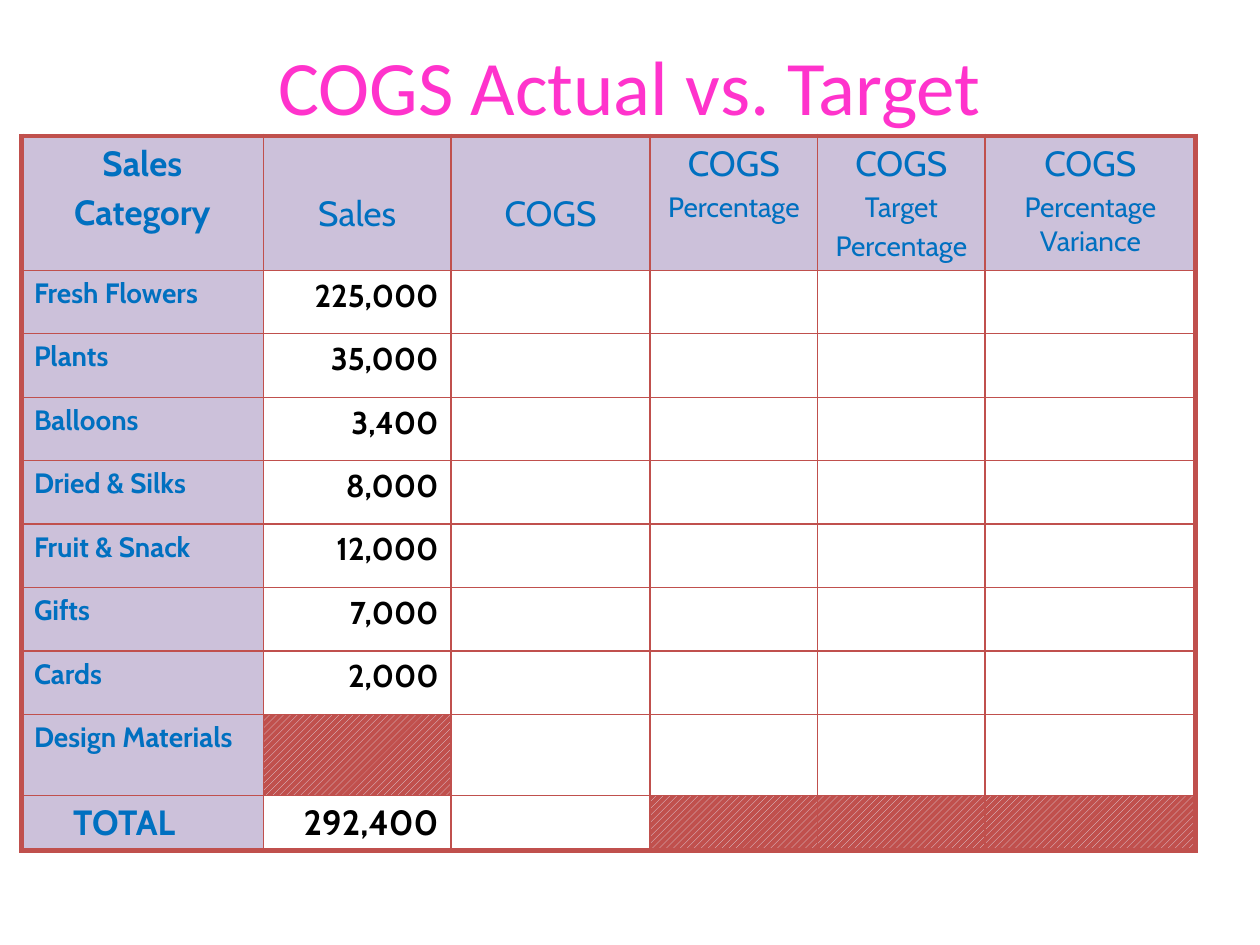
"""Build the cost of goods sold worksheet slide with its title and table."""
from lxml import etree
from pptx import Presentation
from pptx import util as u
from pptx.dml.color import RGBColor
from pptx.enum import dml, text
from pptx.oxml import ns

COLORS = {
    "title": "FF33CC",
    "label": "0070C0",
    "number": "000000",
    "heading fill": "CCC1DA",
    "line": "C0504D",
    "hatch": "E6E0EC",
}
ALIGN = text.PP_ALIGN

TITLE = "COGS Actual vs. Target"
HEADINGS = [
    [("Sales", 20), ("Category", 20)],
    [("Sales", 20)],
    [("COGS", 20)],
    [("COGS", 20), ("Percentage", 16)],
    [("COGS", 20), ("Target", 16), ("Percentage", 16)],
    [("COGS", 20), ("Percentage Variance", 16)],
]
SECOND_LINE_HEADINGS = (1, 2)
SALES = [
    ("Fresh Flowers", "225,000"),
    ("Plants", "35,000"),
    ("Balloons", "3,400"),
    ("Dried & Silks", "8,000"),
    ("Fruit & Snack", "12,000"),
    ("Gifts", "7,000"),
    ("Cards", "2,000"),
    ("Design Materials", ""),
    ("TOTAL", "292,400"),
]
COLUMN_WIDTHS = [1.92, 1.49, 1.58, 1.33, 1.33, 1.67]
ROW_HEIGHTS = [1.06] + [3.53 / 7] * 7 + [0.64, 0.43]
LAST_ROW, LAST_COLUMN = len(ROW_HEIGHTS) - 1, len(COLUMN_WIDTHS) - 1
HATCHED = {(LAST_ROW - 1, 1)} | {(LAST_ROW, column) for column in (3, 4, 5)}


def color(name):
    return RGBColor.from_string(COLORS[name])


def write(frame, content, size=20, font="Cabin", ink="label", bold=False, align=ALIGN.LEFT):
    lines = [(content, size)] if isinstance(content, str) else content
    for index, (line, points) in enumerate(lines):
        paragraph = frame.add_paragraph() if index else frame.paragraphs[0]
        paragraph.alignment = align
        if index:
            paragraph.space_before = u.Pt(points * 0.2)
        run = paragraph.add_run()
        run.text = line
        run.font.name, run.font.size, run.font.bold = font, u.Pt(points), bold
        run.font.color.rgb = color(ink)


def fill_cell(cell, row, column):
    if (row, column) in HATCHED:
        cell.fill.patterned()
        cell.fill.pattern = dml.MSO_PATTERN.WIDE_UPWARD_DIAGONAL
        cell.fill.fore_color.rgb = color("hatch")
        cell.fill.back_color.rgb = color("line")
    elif row == 0 or column == 0:
        cell.fill.solid()
        cell.fill.fore_color.rgb = color("heading fill")
    else:
        cell.fill.background()


def border_cell(cell, row, column):
    outer = {"L": column == 0, "R": column == LAST_COLUMN, "T": row == 0, "B": row == LAST_ROW}
    properties = cell._tc.get_or_add_tcPr()
    for index, (side, is_outer) in enumerate(outer.items()):
        line = etree.Element(ns.qn(f"a:ln{side}"), w=str(u.Pt(3 if is_outer else 1)))
        solid = etree.SubElement(line, ns.qn("a:solidFill"))
        etree.SubElement(solid, ns.qn("a:srgbClr"), val=COLORS["line"])
        properties.insert(index, line)


def add_worksheet(slide):
    frame = slide.shapes.add_table(
        len(ROW_HEIGHTS), len(COLUMN_WIDTHS), u.Inches(0.17), u.Inches(1.08),
        u.Inches(sum(COLUMN_WIDTHS)), u.Inches(sum(ROW_HEIGHTS)))
    table = frame.table
    table.first_row = table.horz_banding = False
    for column, width in zip(table.columns, COLUMN_WIDTHS):
        column.width = u.Inches(width)
    for row, height in zip(table.rows, ROW_HEIGHTS):
        row.height = u.Inches(height)
    for row in range(LAST_ROW + 1):
        for column in range(LAST_COLUMN + 1):
            cell = table.cell(row, column)
            fill_cell(cell, row, column)
            border_cell(cell, row, column)

    for column, lines in enumerate(HEADINGS):
        cell = table.cell(0, column)
        write(cell.text_frame, lines, bold=column == 0, align=ALIGN.CENTER)
        if column in SECOND_LINE_HEADINGS:
            cell.margin_top = u.Inches(0.45)
    for row, (category, amount) in enumerate(SALES, 1):
        is_total = row == LAST_ROW
        write(table.cell(row, 0).text_frame, category, size=20 if is_total else 16, bold=True)
        if amount:
            write(table.cell(row, 1).text_frame, amount, size=20 if is_total else 18,
                  ink="number", bold=True, align=ALIGN.RIGHT)
    table.cell(LAST_ROW, 0).margin_left = u.Inches(0.41)


def main():
    presentation = Presentation()
    presentation.slide_width, presentation.slide_height = u.Inches(10), u.Inches(7.5)
    slide = presentation.slides.add_slide(presentation.slide_layouts[5])
    title = slide.shapes.title
    title.left, title.top = u.Inches(0.5), u.Inches(0.17)
    title.width, title.height = u.Inches(9), u.Inches(1)
    title.text_frame.vertical_anchor = text.MSO_ANCHOR.MIDDLE
    write(title.text_frame, TITLE, size=44, font="Calibri", ink="title", align=ALIGN.CENTER)
    add_worksheet(slide)
    presentation.save("out.pptx")


if __name__ == "__main__":
    main()
